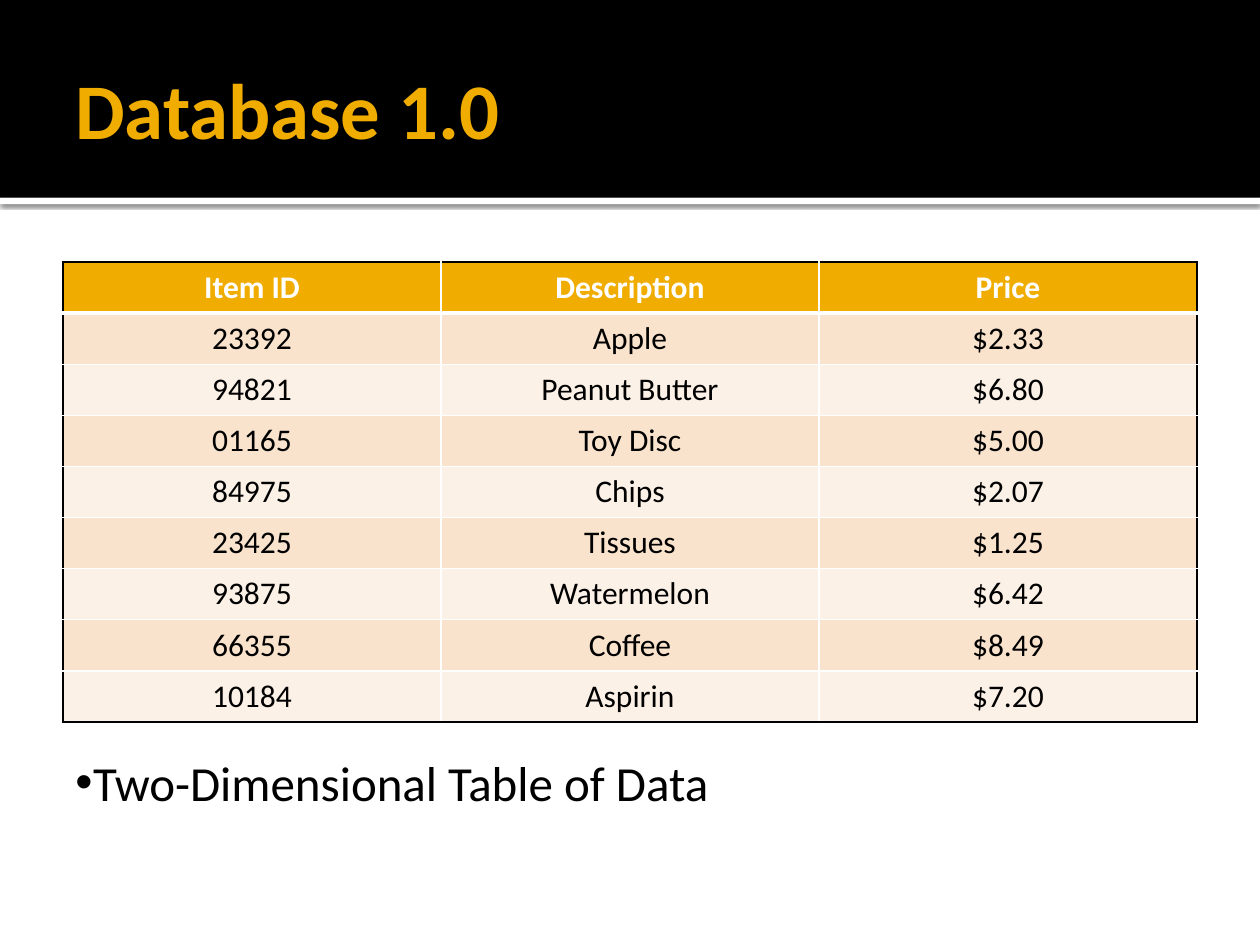
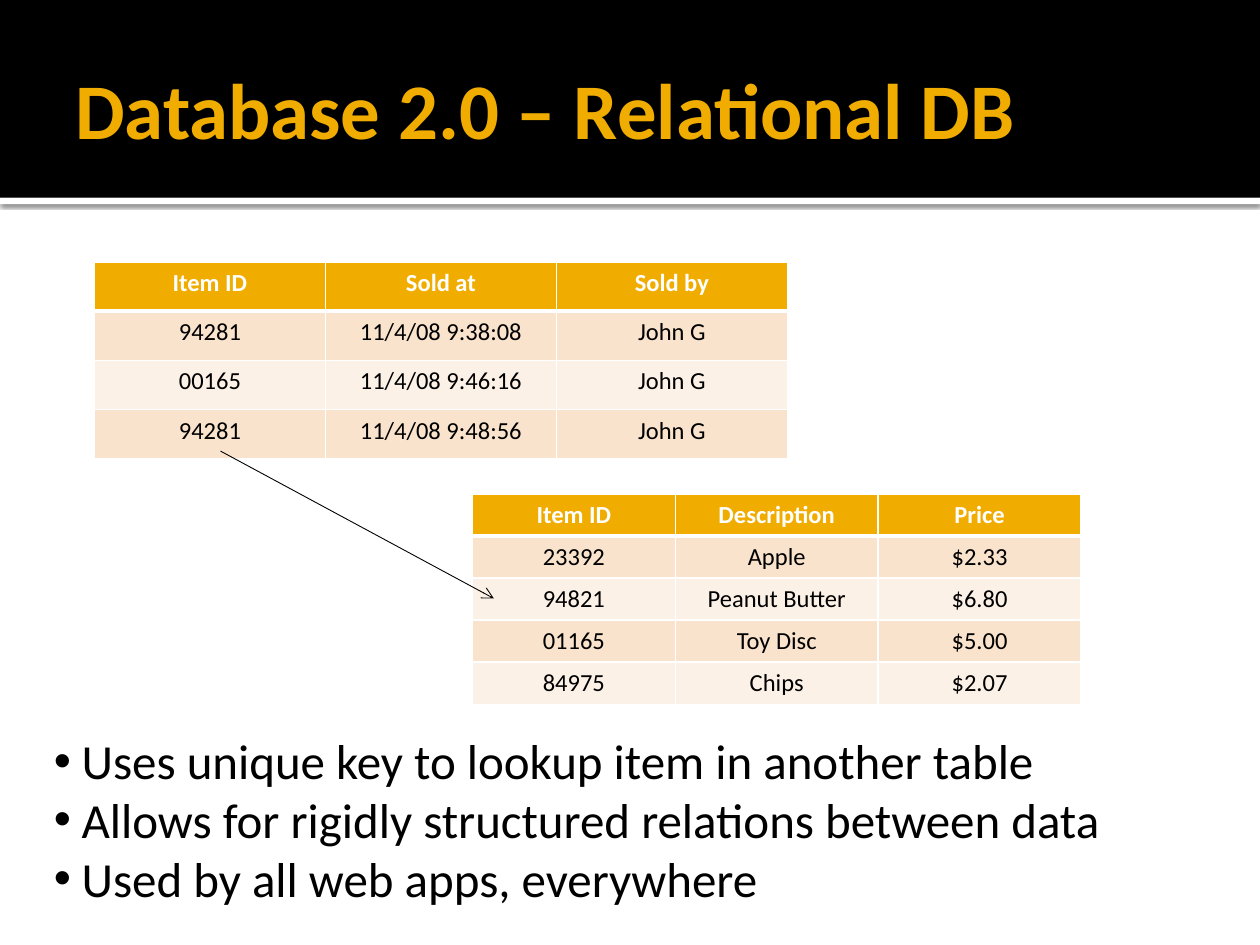
from dataclasses import dataclass

from lxml.etree import SubElement
from pptx import Presentation
from pptx.dml.color import RGBColor
from pptx.enum.shapes import MSO_CONNECTOR, MSO_SHAPE
from pptx.enum.text import MSO_ANCHOR, MSO_AUTO_SIZE, PP_ALIGN
from pptx.oxml import parse_xml
from pptx.oxml.ns import nsdecls, qn
from pptx.util import Inches, Pt


@dataclass(frozen=True)
class Theme:
    font: str = "Calibri"
    black: str = "000000"
    white: str = "FFFFFF"
    gold: str = "F0AD00"
    row_fills: tuple = ("F9E3CC", "FCF1E7")
    title_size: int = 45
    bullet_size: int = 28
    rule: int = 1
    header_rule: int = 3


theme = Theme()


def style_paragraph(paragraph, size, color, bold=False):
    paragraph.font.name = theme.font
    paragraph.font.size = Pt(size)
    paragraph.font.bold = bold
    paragraph.font.color.rgb = RGBColor.from_string(color)


def add_grid(slide, rows, left, top, width, height, size, outline):
    """Add a table with a gold header, banded rows, white rules and an outline."""
    last_row, last_column = len(rows) - 1, len(rows[0]) - 1
    table = slide.shapes.add_table(
        len(rows), len(rows[0]),
        Inches(left), Inches(top), Inches(width), Inches(height)).table
    for row_index, row in enumerate(rows):
        is_header = row_index == 0
        fill = theme.gold if is_header else theme.row_fills[(row_index - 1) % 2]
        for column_index, text in enumerate(row):
            cell = table.cell(row_index, column_index)
            cell.text = text
            paragraph = cell.text_frame.paragraphs[0]
            paragraph.alignment = PP_ALIGN.CENTER
            style_paragraph(paragraph, size,
                            theme.white if is_header else theme.black, is_header)
            borders = (
                ("L", column_index == 0, theme.rule),
                ("R", column_index == last_column, theme.rule),
                ("T", is_header, theme.header_rule if row_index == 1 else theme.rule),
                ("B", row_index == last_row,
                 theme.header_rule if is_header else theme.rule),
            )
            properties = cell._tc.get_or_add_tcPr()
            for side, is_outer, weight in borders:
                line = SubElement(properties, qn(f"a:ln{side}"), w=str(Pt(weight)))
                line_fill = SubElement(line, qn("a:solidFill"))
                SubElement(line_fill, qn("a:srgbClr"),
                           val=outline if is_outer else theme.white)
            cell.fill.solid()
            cell.fill.fore_color.rgb = RGBColor.from_string(fill)


items = [
    ("Item ID", "Description", "Price"),
    ("23392", "Apple", "$2.33"),
    ("94821", "Peanut Butter", "$6.80"),
    ("01165", "Toy Disc", "$5.00"),
    ("84975", "Chips", "$2.07"),
    ("23425", "Tissues", "$1.25"),
    ("93875", "Watermelon", "$6.42"),
    ("66355", "Coffee", "$8.49"),
    ("10184", "Aspirin", "$7.20"),
]
sales = [
    ("Item ID", "Sold at", "Sold by"),
    ("94281", "11/4/08 9:38:08", "John G"),
    ("00165", "11/4/08 9:46:16", "John G"),
    ("94281", "11/4/08 9:48:56", "John G"),
]

# Tables: rows, left, top, width, height, type size, outline colour
# Bullets: left, top, height, indent, lines
pages = [
    {
        "title": "Database 1.0",
        "tables": [(items, 0.5, 2.08, 9, 3.65, 18, theme.black)],
        "bullets": (0.5, 5.92, 0.57, 0.14, ["Two-Dimensional Table of Data"]),
    },
    {
        "title": "Database 2.0 – Relational DB",
        "tables": [
            (items[:5], 3.75, 3.92, 4.83, 1.67, 14, theme.white),
            (sales, 0.75, 2.08, 5.5, 1.56, 14, theme.white),
        ],
        "bullets": (0.33, 5.75, 1.51, 0.22, [
            "Uses unique key to lookup item in another table",
            "Allows for rigidly structured relations between data",
            "Used by all web apps, everywhere",
        ]),
    },
]

presentation = Presentation()
presentation.slide_width = Inches(10)
presentation.slide_height = Inches(7.5)

for page in pages:
    slide = presentation.slides.add_slide(presentation.slide_layouts[6])

    # White strip with a shadow, then the black title band
    for top, height, color in ((1.57, 0.05, theme.white), (0, 1.57, theme.black)):
        band = slide.shapes.add_shape(
            MSO_SHAPE.RECTANGLE, 0, Inches(top), Inches(10), Inches(height))
        band.shadow.inherit = False
        band.fill.solid()
        band.fill.fore_color.rgb = RGBColor.from_string(color)
        band.line.fill.background()
        if color == theme.white:
            effects = band._element.spPr.find(qn("a:effectLst"))
            effects.append(parse_xml(
                f'<a:outerShdw {nsdecls("a")} blurRad="{Pt(2.5)}" dist="{Pt(0.8)}" '
                f'dir="5400000" algn="tl" rotWithShape="0">'
                f'<a:srgbClr val="{theme.black}"><a:alpha val="60000"/></a:srgbClr>'
                f'</a:outerShdw>'))

    title_box = slide.shapes.add_textbox(
        Inches(0.5), Inches(0.17), Inches(9), Inches(1.37))
    title_frame = title_box.text_frame
    title_frame.word_wrap = True
    title_frame.vertical_anchor = MSO_ANCHOR.MIDDLE
    title_frame.margin_right = Inches(0.05)
    title_frame.text = page["title"]
    style_paragraph(title_frame.paragraphs[0], theme.title_size, theme.gold, True)

    for grid in page["tables"]:
        add_grid(slide, *grid)

    left, top, height, indent, lines = page["bullets"]
    bullet_box = slide.shapes.add_textbox(
        Inches(left), Inches(top), Inches(9), Inches(height))
    bullet_frame = bullet_box.text_frame
    bullet_frame.word_wrap = True
    bullet_frame.auto_size = MSO_AUTO_SIZE.SHAPE_TO_FIT_TEXT
    bullet_frame.text = "\n".join(lines)
    for paragraph in bullet_frame.paragraphs:
        style_paragraph(paragraph, theme.bullet_size, theme.black)
        properties = paragraph._p.get_or_add_pPr()
        properties.set("marL", str(Inches(indent)))
        properties.set("indent", str(-Inches(indent)))
        bullet_font = parse_xml(f'<a:buFont {nsdecls("a")} typeface="Arial"/>')
        bullet = parse_xml(f'<a:buChar {nsdecls("a")} char="•"/>')
        properties.insert(0, bullet_font)
        properties.insert(1, bullet)

# Arrow from the sold item to its row in the item table
key_arrow = presentation.slides[1].shapes.add_connector(
    MSO_CONNECTOR.STRAIGHT,
    Inches(1.75), Inches(3.58), Inches(3.92), Inches(4.75))
key_arrow.line.color.rgb = RGBColor.from_string(theme.black)
key_arrow.line.width = Pt(0.5)
SubElement(key_arrow.line._get_or_add_ln(), qn("a:tailEnd"), type="arrow")
SubElement(key_arrow._element.spPr, qn("a:effectLst"))

presentation.save("out.pptx")
